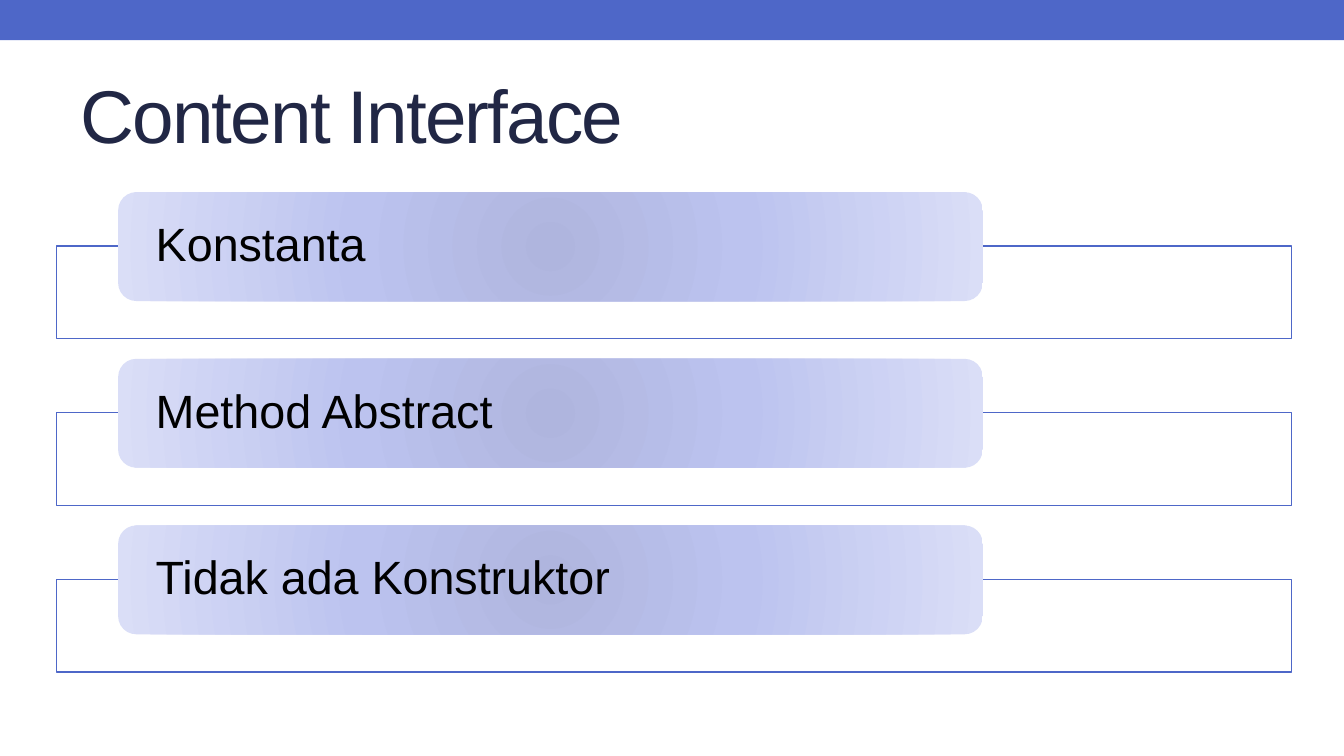
from lxml import etree
from pptx import Presentation
from pptx.dml.color import RGBColor
from pptx.enum.shapes import MSO_SHAPE
from pptx.enum.text import MSO_ANCHOR, MSO_AUTO_SIZE, PP_ALIGN
from pptx.oxml import parse_xml
from pptx.oxml.ns import nsdecls, qn
from pptx.util import Inches, Pt

RECTANGLE, ROUNDED = MSO_SHAPE.RECTANGLE, MSO_SHAPE.ROUNDED_RECTANGLE
LEFT, MIDDLE = PP_ALIGN.LEFT, MSO_ANCHOR.MIDDLE
NO_AUTOFIT = MSO_AUTO_SIZE.NONE
TITLE_ONLY = 5

WIDTH = 10
HEIGHT = WIDTH * 9 / 16
FONT = "Arial"
COLORS = {"accent": "4E67C8", "title": "212745", "text": "000000", "panel": "FFFFFF"}
LABEL_GRADIENT = [(0, "AFB5DE"), (45, "BCC3EF"), (100, "DADEF7")]
ITEMS = ["Konstanta", "Method Abstract", "Tidak ada Konstruktor"]
ROW_PITCH = 1.24


def color(name):
    return RGBColor.from_string(COLORS[name])


def add_box(slide, kind, box):
    shape = slide.shapes.add_shape(kind, *map(Inches, box))
    shape.shadow.inherit = False
    shape.line.fill.background()
    return shape


def fill_solid(shape, name):
    shape.fill.solid()
    shape.fill.fore_color.rgb = color(name)


def fill_radial(shape, stops):
    """Give the shape a circular gradient of (percent, hex) stops."""
    stop_xml = "".join(
        f'<a:gs pos="{percent * 1000}"><a:srgbClr val="{value}"/></a:gs>'
        for percent, value in stops
    )
    gradient = parse_xml(
        f'<a:gradFill {nsdecls("a")} rotWithShape="1"><a:gsLst>{stop_xml}</a:gsLst>'
        '<a:path path="circle"><a:fillToRect l="100000" t="100000" '
        'r="100000" b="100000"/></a:path></a:gradFill>'
    )
    properties = shape.element.spPr
    properties.find(qn("a:prstGeom")).addnext(gradient)


def format_text(paragraph, size, name):
    paragraph.alignment = LEFT
    font = paragraph.runs[0].font
    font.name, font.size, font.color.rgb = FONT, Pt(size), color(name)


def add_title(slide, text, box):
    title = slide.shapes.title
    title.left, title.top, title.width, title.height = map(Inches, box)
    text_frame = title.text_frame
    text_frame.text = text
    text_frame.auto_size = NO_AUTOFIT
    text_frame.vertical_anchor = MIDDLE
    paragraph = text_frame.paragraphs[0]
    format_text(paragraph, 40, "title")
    paragraph.runs[0].font._element.set("spc", "-100")


def add_item(slide, text, box):
    """Place an outlined panel with a label overlapping its top edge."""
    left, top, width, height = box
    panel_top = top + 0.4
    panel = add_box(slide, RECTANGLE, (left, panel_top, width, top + height - panel_top))
    fill_solid(panel, "panel")
    panel_color = panel.element.spPr.find(qn("a:solidFill"))[0]
    etree.SubElement(panel_color, qn("a:alpha")).set("val", "90000")
    panel.line.color.rgb = color("accent")
    panel.line.width = Pt(0.75)

    label = add_box(slide, ROUNDED, (left + width * 0.05, top, width * 0.7, 0.81))
    fill_radial(label, LABEL_GRADIENT)
    text_frame = label.text_frame
    text_frame.text = text
    text_frame.word_wrap = True
    text_frame.vertical_anchor = MIDDLE
    text_frame.margin_left = text_frame.margin_right = Inches(0.24)
    text_frame.margin_top = text_frame.margin_bottom = 0
    paragraph = text_frame.paragraphs[0]
    paragraph.line_spacing = 0.9
    format_text(paragraph, 25, "text")


def main():
    presentation = Presentation()
    presentation.slide_width = Inches(WIDTH)
    presentation.slide_height = Inches(HEIGHT)
    slide = presentation.slides.add_slide(presentation.slide_layouts[TITLE_ONLY])

    fill_solid(add_box(slide, RECTANGLE, (0, 0, WIDTH, 0.3)), "accent")
    for row, text in enumerate(ITEMS):
        add_item(slide, text, (0.42, 1.43 + row * ROW_PITCH, 9.19, 1.09))
    add_title(slide, "Content Interface", (0.5, 0.44, 9, 0.81))

    presentation.save("out.pptx")


if __name__ == "__main__":
    main()
